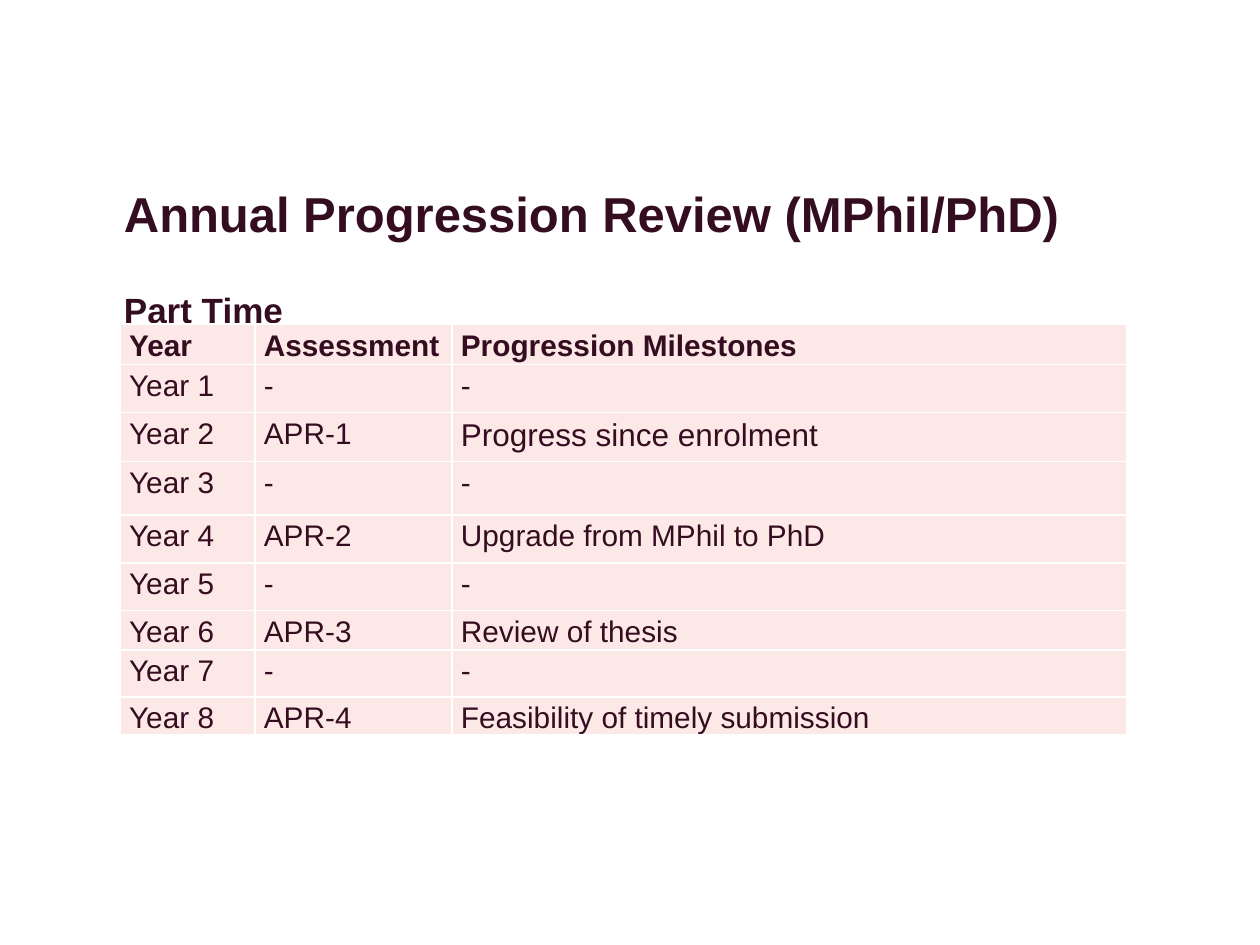
from pptx import Presentation
from pptx.dml.color import RGBColor
from pptx.enum.text import MSO_ANCHOR, MSO_AUTO_SIZE, PP_ALIGN
from pptx.oxml import parse_xml
from pptx.oxml.ns import nsdecls
from pptx.util import Pt

TOP = MSO_ANCHOR.TOP
NO_AUTOFIT = MSO_AUTO_SIZE.NONE
LEFT, JUSTIFY = PP_ALIGN.LEFT, PP_ALIGN.JUSTIFY
TITLE_ONLY = 5

PLUM = RGBColor(0x35, 0x0D, 0x20)
BLUSH = RGBColor(0xFD, 0xE8, 0xE8)
WHITE = RGBColor(0xFF, 0xFF, 0xFF)

HEADINGS = ("Year", "Assessment", "Progression Milestones")
MILESTONES = (
    "Progress since enrolment",
    "Upgrade from MPhil to PhD",
    "Review of thesis",
    "Feasibility of timely submission",
)
COLUMN_WIDTHS = (77, 112.6, 385.4)
ROW_HEIGHTS = (23.2, 27.4, 28, 30.5, 27.4, 27.4, 22.4, 26.8, 21.2)


def review_rows():
    """Even years hold a review; odd years hold none."""
    rows = [HEADINGS]
    for number, milestone in enumerate(MILESTONES, start=1):
        rows.append((f"Year {2 * number - 1}", "-", "-"))
        rows.append((f"Year {2 * number}", f"APR-{number}", milestone))
    return rows


class SlideWriter:
    font_name = "Arial"
    body_size = 17

    def __init__(self, slide):
        self.slide = slide

    def style(self, font, size, bold):
        font.name = self.font_name
        font.size = Pt(size)
        font.bold = bold
        font.color.rgb = PLUM

    def title(self, heading, subheading, left, top, width, height):
        box = self.slide.shapes.title
        box.left, box.top, box.width, box.height = map(Pt, (left, top, width, height))
        frame = box.text_frame
        frame.margin_left = frame.margin_right = 0
        frame.margin_top = frame.margin_bottom = 0
        frame.vertical_anchor = TOP
        frame.word_wrap = True
        frame.auto_size = NO_AUTOFIT
        para = frame.paragraphs[0]
        para.alignment = LEFT
        para.line_spacing = Pt(50)
        para.space_before = Pt(0)
        span = para.add_run()
        span.text = heading
        self.style(span.font, 28, True)
        para.add_line_break()
        span = para.add_run()
        span.text = subheading
        self.style(span.font, 20, True)

    def table(self, rows, left, top, widths, heights):
        frame = self.slide.shapes.add_table(
            len(rows), len(widths), Pt(left), Pt(top), Pt(sum(widths)), Pt(sum(heights)))
        table = frame.table
        for column, width in zip(table.columns, widths):
            column.width = Pt(width)
        for row, height, texts in zip(table.rows, heights, rows):
            row.height = Pt(height)
            for cell, text in zip(row.cells, texts):
                self.cell(cell, text, bold=texts is HEADINGS)
        return table

    def cell(self, cell, text, bold):
        self.borders(cell)
        cell.fill.solid()
        cell.fill.fore_color.rgb = BLUSH
        cell.margin_left = cell.margin_right = Pt(5.2)
        cell.margin_top = cell.margin_bottom = 0
        cell.vertical_anchor = TOP
        cell.text = text
        para = cell.text_frame.paragraphs[0]
        para.alignment = JUSTIFY
        para.line_spacing = 1.15
        self.style(para.font, self.body_size, bold)

    def borders(self, cell):
        properties = cell._tc.get_or_add_tcPr()
        for side in "LRTB":
            properties.append(parse_xml(
                f'<a:ln{side} {nsdecls("a")} w="{Pt(1)}"><a:solidFill>'
                f'<a:srgbClr val="{WHITE}"/></a:solidFill></a:ln{side}>'))


def main():
    deck = Presentation()
    deck.slide_width, deck.slide_height = Pt(720), Pt(540)
    page = SlideWriter(deck.slides.add_slide(deck.slide_layouts[TITLE_ONLY]))
    page.title("Annual Progression Review (MPhil/PhD)", "Part Time", 70.8, 88.6, 566.6, 115.9)
    table = page.table(review_rows(), 68.6, 185.2, COLUMN_WIDTHS, ROW_HEIGHTS)
    enrolment = table.cell(2, 2).text_frame.paragraphs[0]
    enrolment.alignment = LEFT
    enrolment.font.size = Pt(18)
    deck.save("out.pptx")


if __name__ == "__main__":
    main()
